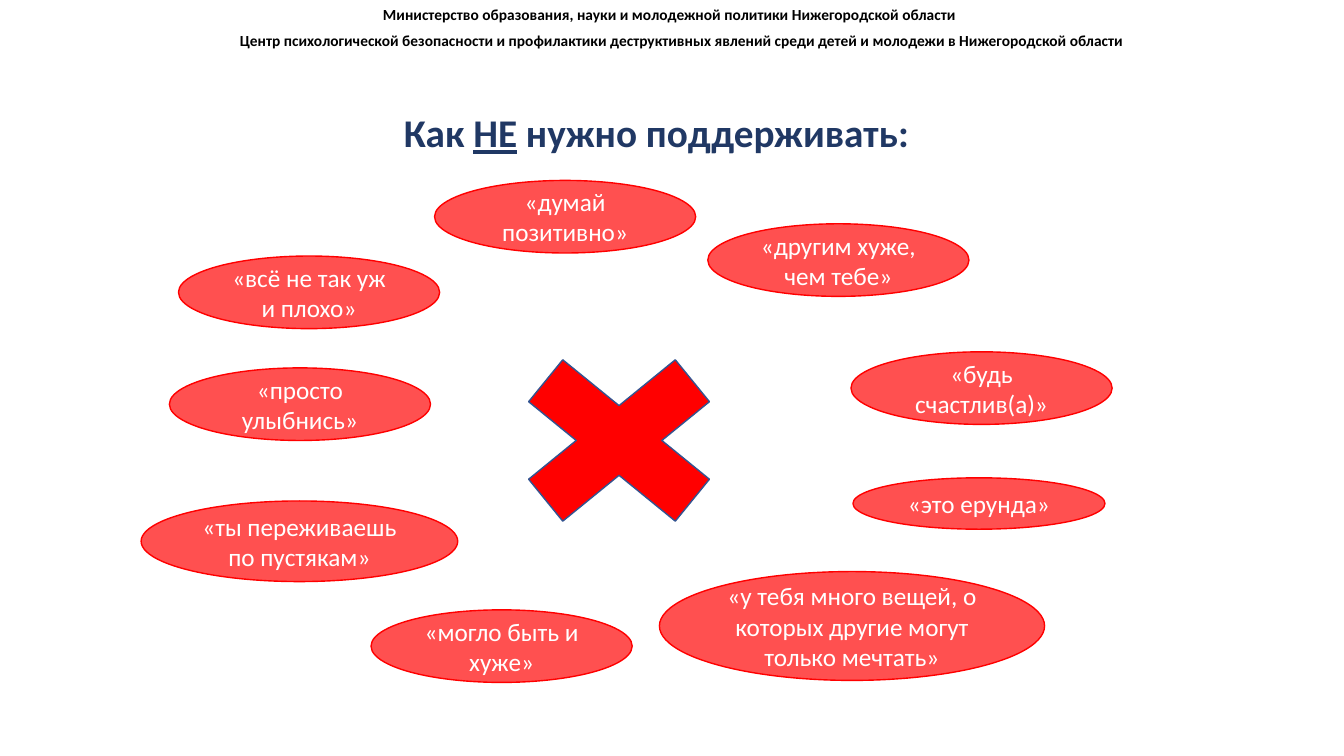
from pptx import Presentation
from pptx.dml.color import RGBColor
from pptx.enum import shapes, text
from pptx.util import Inches, Pt

# Content: positions are left, top, width, height in inches
HEADINGS = [
    ("Министерство образования, науки и молодежной политики Нижегородской области",
     (3.7, 0, 8.32, 0.29)),
    ("Центр психологической безопасности и профилактики деструктивных явлений "
     "среди детей и молодежи в Нижегородской области", (2.28, 0.26, 9.78, 0.29)),
]
TITLE = [("Как ", False), ("НЕ", True), (" нужно поддерживать:", False)]
TITLE_BOX = (3.88, 1.03, 5.26, 0.57)
USUAL_SIZE = (2.59, 0.72)
PHRASES = [
    ("«ты переживаешь по пустякам»", (1.4, 4.97), (3.14, 0.8)),
    ("«могло быть и хуже»", (3.68, 6.05), USUAL_SIZE),
    ("«всё не так уж и плохо»", (1.77, 2.54), USUAL_SIZE),
    ("«у тебя много вещей, о которых другие могут только мечтать»",
     (6.54, 5.67), (3.82, 1.08)),
    ("«просто улыбнись»", (1.68, 3.65), USUAL_SIZE),
    ("«будь счастлив(а)»", (8.44, 3.49), USUAL_SIZE),
    ("«это ерунда»", (8.46, 4.74), (2.5, 0.51)),
    ("«другим хуже, чем тебе»", (7.02, 2.22), USUAL_SIZE),
    ("«думай позитивно»", (4.31, 1.79), USUAL_SIZE),
]
CROSS_BOX = (4.74, 3.23, 2.8, 2.28)

# Formats
HEADING_FONT = {"size": Pt(11), "bold": True}
TITLE_FONT = {"size": Pt(28), "bold": True}
PHRASE_FONT = {"size": Pt(18)}


def color(hex_value):
    return RGBColor.from_string(hex_value)


def add_run(paragraph, words, hex_value, font_format):
    run = paragraph.add_run()
    run.text = words
    run.font.color.rgb = color(hex_value)
    for key, value in {"name": "Calibri", **font_format}.items():
        setattr(run.font, key, value)


def add_text(box, wrap=True):
    frame = slide.shapes.add_textbox(*map(Inches, box)).text_frame
    frame.word_wrap = wrap
    frame.auto_size = text.MSO_AUTO_SIZE.SHAPE_TO_FIT_TEXT
    return frame.paragraphs[0]


def add_figure(kind, box, fill, line):
    figure = slide.shapes.add_shape(kind, *map(Inches, box))
    figure.shadow.inherit = False
    figure.fill.solid()
    figure.fill.fore_color.rgb = color(fill)
    figure.line.color.rgb = color(line)
    figure.line.width = Pt(1)
    return figure


prs = Presentation()
prs.slide_width, prs.slide_height = Inches(13.33), Inches(7.5)
slide = prs.slides.add_slide(prs.slide_layouts[6])

# Title and headings
title = add_text(TITLE_BOX, wrap=False)
title.alignment = text.PP_ALIGN.CENTER
for words, underlined in TITLE:
    add_run(title, words, "203864", {**TITLE_FONT, "underline": underlined})
for words, box in HEADINGS:
    add_run(add_text(box), words, "000000", HEADING_FONT)

# Phrases to avoid
for words, corner, size in PHRASES:
    bubble = add_figure(shapes.MSO_SHAPE.OVAL, corner + size, "FF5050", "FF0000")
    frame = bubble.text_frame
    frame.word_wrap = True
    frame.vertical_anchor = text.MSO_ANCHOR.MIDDLE
    frame.paragraphs[0].alignment = text.PP_ALIGN.CENTER
    add_run(frame.paragraphs[0], words, "FFFFFF", PHRASE_FONT)

# Central cross
add_figure(shapes.MSO_SHAPE.MATH_MULTIPLY, CROSS_BOX, "FF0000", "325491")

prs.save("out.pptx")
